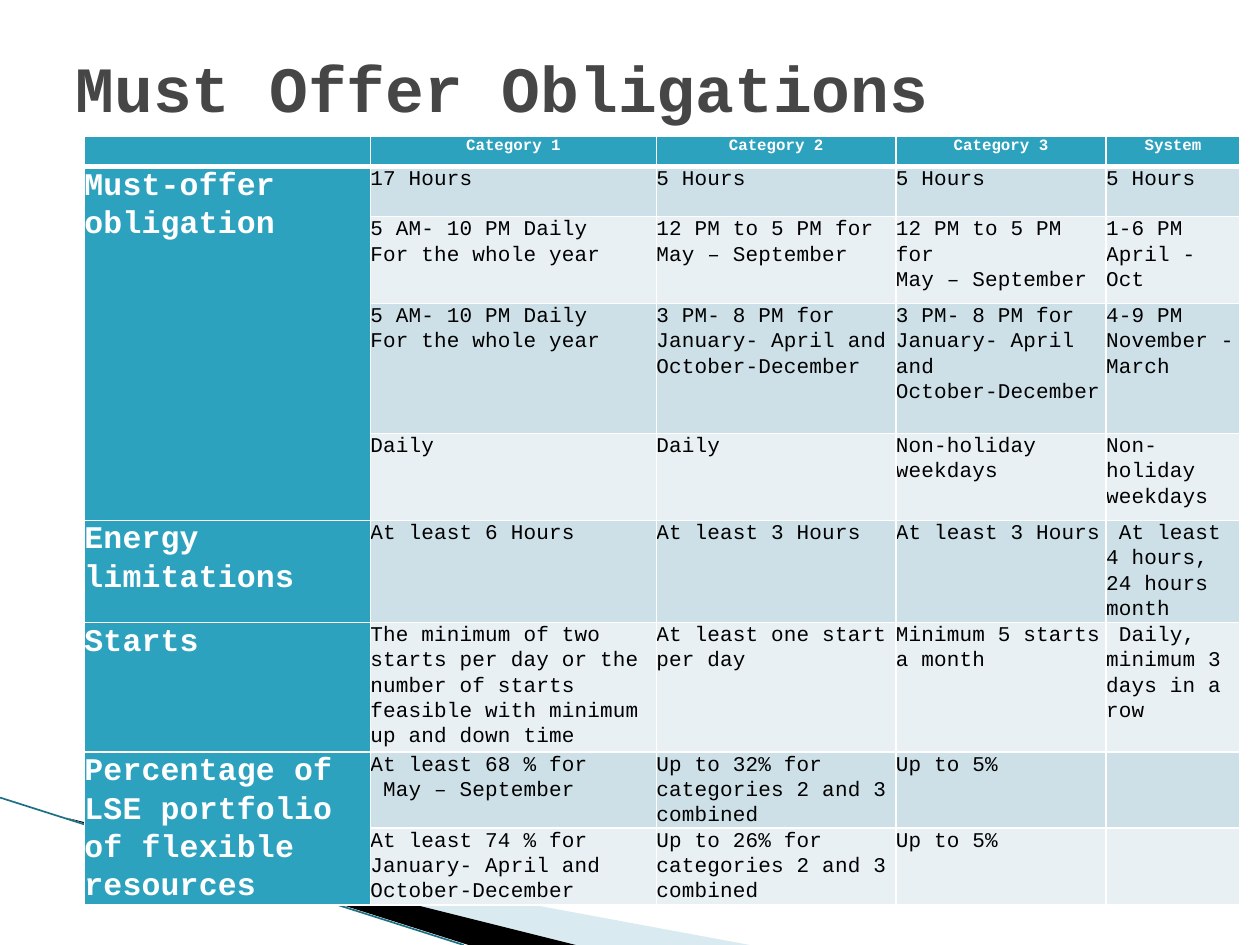
import pptx
import pptx.dml.color
import pptx.enum.shapes
import pptx.enum.text
import pptx.oxml.ns
import pptx.util
from lxml import etree

RGBColor = pptx.dml.color.RGBColor
Inches = pptx.util.Inches
Pt = pptx.util.Pt
PP_ALIGN = pptx.enum.text.PP_ALIGN
qn = pptx.oxml.ns.qn

WHITE = RGBColor(0xFF, 0xFF, 0xFF)
BLACK = RGBColor(0x00, 0x00, 0x00)
TITLE_GREY = RGBColor(0x46, 0x46, 0x46)
TEAL = RGBColor(0x2D, 0xA2, 0xBF)
DARK_TEAL = RGBColor(0x1B, 0x70, 0x84)
SWOOSH_BLUE = RGBColor(0xA0, 0xCB, 0xDC)
BAND_DARK = RGBColor(0xCD, 0xE0, 0xE8)
BAND_LIGHT = RGBColor(0xE8, 0xF0, 0xF4)

COLUMN_WIDTHS = [2.27, 2.27, 1.9, 1.67, 1.06]
ROW_HEIGHTS = [0.24, 0.4, 0.69, 1.03, 0.69, 0.81, 1.03, 0.6, 0.61]
OBLIGATIONS = [
    ["", "Category 1", "Category 2", "Category 3", "System"],
    ["Must-offer obligation", "17 Hours", "5 Hours", "5 Hours", "5 Hours"],
    ["", "5 AM- 10 PM Daily\nFor the whole year",
     "12 PM to 5 PM for\nMay – September",
     "12 PM to 5 PM for\nMay – September", "1-6 PM April - Oct"],
    ["", "5 AM- 10 PM Daily\nFor the whole year",
     "3 PM- 8 PM for January- April and\nOctober-December",
     "3 PM- 8 PM for January- April and\nOctober-December",
     "4-9 PM November - March"],
    ["", "Daily", "Daily", "Non-holiday weekdays", "Non-holiday weekdays"],
    ["Energy limitations", "At least 6 Hours", "At least 3 Hours",
     "At least 3 Hours", " At least 4 hours, 24 hours month"],
    ["Starts",
     "The minimum of two starts per day or the number of starts feasible "
     "with minimum up and down time",
     "At least one start per day", "Minimum 5 starts a month",
     " Daily, minimum 3 days in a row"],
    ["Percentage of LSE portfolio of flexible resources",
     "At least 68 % for\n May – September",
     "Up to 32% for categories 2 and 3 combined", "Up to 5%", ""],
    ["", "At least 74 % for January- April and October-December",
     "Up to 26% for categories 2 and 3 combined", "Up to 5%", ""],
]
# First and last row of each label that spans several rows
LABEL_SPANS = [(1, 4), (7, 8)]


class SlideBuilder:
    font_name = "Courier New"

    def __init__(self, slide):
        self.slide = slide

    def format_runs(self, paragraph, size, color, bold):
        for run in paragraph.runs:
            run.font.name = self.font_name
            run.font.size = Pt(size)
            run.font.bold = bold
            run.font.color.rgb = color

    def title(self, text, left, top, width, height):
        heading = self.slide.shapes.title
        heading.left, heading.top = Inches(left), Inches(top)
        heading.width, heading.height = Inches(width), Inches(height)
        frame = heading.text_frame
        frame.text = text
        frame.vertical_anchor = pptx.enum.text.MSO_ANCHOR.MIDDLE
        frame.paragraphs[0].alignment = PP_ALIGN.LEFT
        self.format_runs(frame.paragraphs[0], 36.9, TITLE_GREY, True)

    def swoosh(self, points, color, alpha=None):
        corners = [(Inches(x), Inches(y)) for x, y in points]
        builder = self.slide.shapes.build_freeform(*corners[0], scale=1.0)
        builder.add_line_segments(corners[1:], close=True)
        band = builder.convert_to_shape()
        band.shadow.inherit = False
        band.fill.solid()
        band.fill.fore_color.rgb = color
        band.line.fill.background()
        if alpha is not None:
            fill_color = band._element.spPr.find(qn("a:solidFill"))[0]
            etree.SubElement(fill_color, qn("a:alpha"), val=str(alpha * 1000))

    def line(self, start, end, color, width):
        edge = self.slide.shapes.add_connector(
            pptx.enum.shapes.MSO_CONNECTOR.STRAIGHT,
            *(Inches(value) for value in start + end))
        edge.line.color.rgb = color
        edge.line.width = Pt(width)
        etree.SubElement(edge._element.spPr, qn("a:effectLst"))

    def borders(self, cell, bottom_width):
        properties = cell._tc.get_or_add_tcPr()
        for side, width in zip("LRTB", (1, 1, 1, bottom_width)):
            border = etree.SubElement(properties, qn(f"a:ln{side}"),
                                      w=str(Pt(width)))
            fill = etree.SubElement(border, qn("a:solidFill"))
            etree.SubElement(fill, qn("a:srgbClr"), val=str(WHITE))

    def cell(self, cell, text, fill, size, color, bold, header):
        cell.margin_left = cell.margin_right = 0
        cell.margin_top = cell.margin_bottom = 0
        self.borders(cell, 3 if header else 1)
        cell.fill.solid()
        cell.fill.fore_color.rgb = fill
        cell.text_frame.text = text
        for paragraph in cell.text_frame.paragraphs:
            paragraph.line_spacing = 1.07
            if header:
                paragraph.alignment = PP_ALIGN.CENTER
                paragraph.space_after = Pt(4)
            self.format_runs(paragraph, size, color, bold)
            if not text:
                paragraph._p.get_or_add_endParaRPr().set("sz", str(size * 100))
            if not header:
                for run in paragraph.runs:
                    run._r.get_or_add_rPr().set("spc", "10")

    def table(self, rows, left, top, widths, heights, spans):
        table = self.slide.shapes.add_table(
            len(rows), len(widths), Inches(left), Inches(top),
            Inches(sum(widths)), Inches(sum(heights))).table
        table.first_row = table.horz_banding = False
        for column, width in zip(table.columns, widths):
            column.width = Inches(width)
        for row, height in zip(table.rows, heights):
            row.height = Inches(height)
        for first, last in spans:
            table.cell(first, 0).merge(table.cell(last, 0))
        for r, texts in enumerate(rows):
            for c, text in enumerate(texts):
                if r == 0:
                    look = (TEAL, 9, WHITE, True)
                elif c == 0:
                    look = (TEAL, 18, WHITE, True)
                else:
                    look = (BAND_DARK if r % 2 else BAND_LIGHT, 12, BLACK, False)
                self.cell(table.cell(r, c), text, *look, header=r == 0)


def main():
    deck = pptx.Presentation()
    deck.slide_width, deck.slide_height = Inches(10), Inches(7.5)
    builder = SlideBuilder(deck.slides.add_slide(deck.slide_layouts[5]))

    # Corner decoration
    builder.swoosh([(0.55, 6.5), (5.95, 7.5), (4.56, 7.5)], SWOOSH_BLUE, alpha=40)
    builder.swoosh([(0.53, 6.49), (4.57, 7.5), (3.72, 7.5)], BLACK)
    builder.line((0, 6.33), (3.68, 7.5), DARK_TEAL, 0.95)

    # Obligations by category
    builder.table(OBLIGATIONS, 0.67, 1.08, COLUMN_WIDTHS, ROW_HEIGHTS, LABEL_SPANS)

    # Title
    builder.title("Must Offer Obligations", 0.5, 0.3, 9, 0.78)

    deck.save("out.pptx")


if __name__ == "__main__":
    main()
